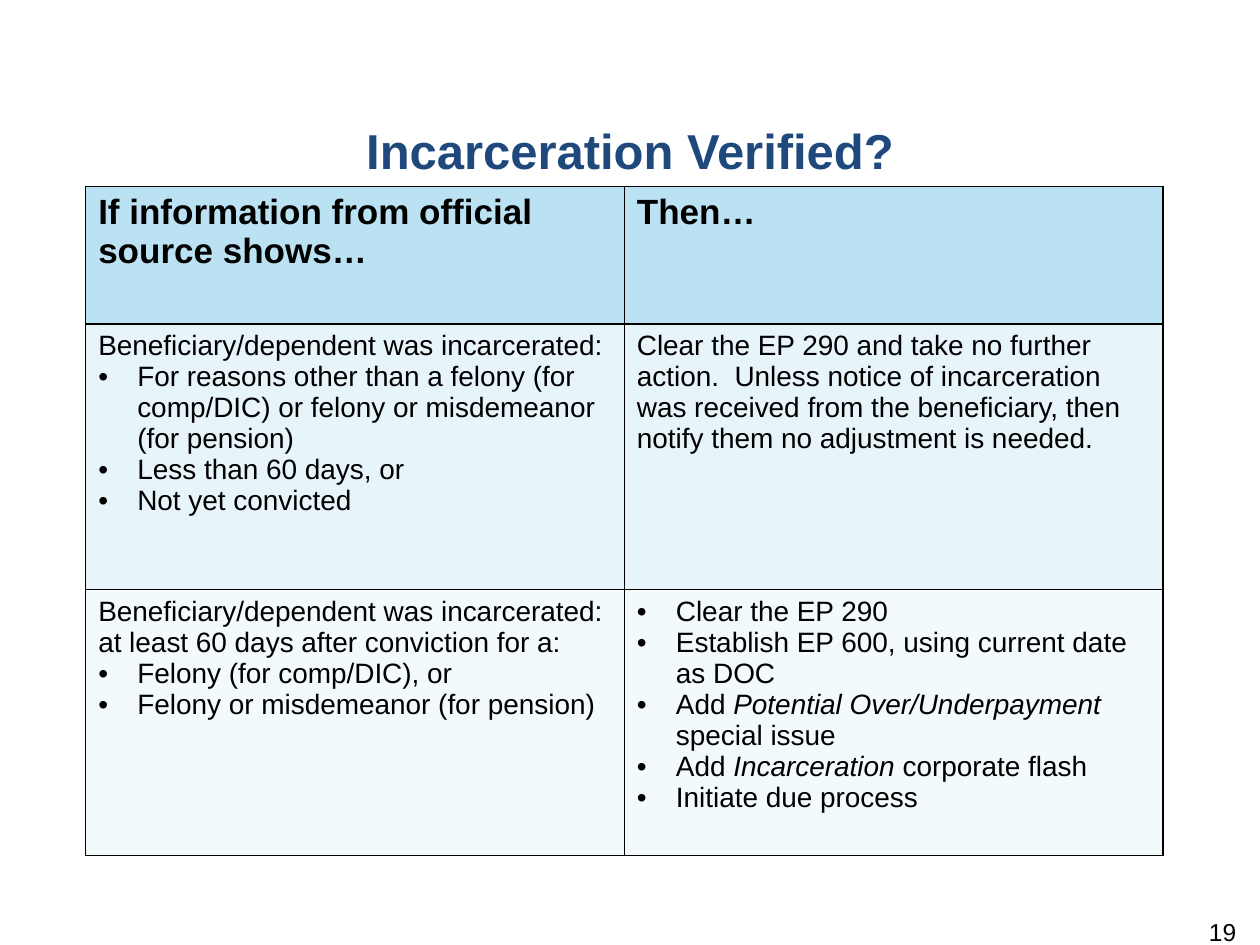
from pptx import Presentation
from pptx.dml.color import RGBColor
from pptx.enum.text import MSO_ANCHOR, PP_ALIGN
from pptx.oxml.ns import qn
from pptx.util import Emu, Inches, Pt
from lxml.etree import SubElement

FONT = "Arial"
BLACK = "000000"
INDENT = Inches(0.31)
ROW_HEIGHTS = [1.09, 2.11, 2.11]
ROW_FILLS = ["BBE2F2", "E7F4FA", "F3FAFC"]
ROW_SIZES = [20, 16, 16]

ROWS = [
    [["If information from official source shows…"], ["Then…"]],
    [
        [
            "Beneficiary/dependent was incarcerated:",
            "•For reasons other than a felony (for comp/DIC) or felony or misdemeanor (for pension)",
            "•Less than 60 days, or",
            "•Not yet convicted",
        ],
        [
            "Clear the EP 290 and take no further action.  Unless notice of incarceration "
            "was received from the beneficiary, then notify them no adjustment is needed."
        ],
    ],
    [
        [
            "Beneficiary/dependent was incarcerated: at least 60 days after conviction for a:",
            "•Felony (for comp/DIC), or",
            "•Felony or misdemeanor (for pension)",
        ],
        [
            "•Clear the EP 290",
            "•Establish EP 600, using current date as DOC",
            "•Add *Potential Over/Underpayment *special issue",
            "•Add *Incarceration* corporate flash",
            "•Initiate due process",
        ],
    ],
]


def color(hex_value):
    """Turn a hex string into a colour."""
    return RGBColor.from_string(hex_value)


def add_run(p, text, size, hex_value=BLACK, bold=False, italic=False):
    """Add one formatted run to a paragraph."""
    r = p.add_run()
    r.text = text
    r.font.name, r.font.size = FONT, Pt(size)
    r.font.bold, r.font.italic = bold, italic
    r.font.color.rgb = color(hex_value)


def add_label(s, box, text, size, align, anchor, top_inset, **style):
    """Add a single-line text box."""
    tf = s.shapes.add_textbox(*map(Inches, box)).text_frame
    tf.word_wrap = True
    tf.vertical_anchor = anchor
    tf.margin_top = Inches(top_inset)
    p = tf.paragraphs[0]
    p.alignment, p.space_after = align, Pt(6)
    add_run(p, text, size, **style)


def set_bullet(p):
    """Give a paragraph a hanging bullet."""
    pPr = p._p.get_or_add_pPr()
    pPr.set("marL", str(INDENT))
    pPr.set("indent", str(-INDENT))
    SubElement(pPr, qn("a:buFont"), typeface=FONT)
    SubElement(pPr, qn("a:buChar"), char="•")


def set_borders(cell):
    """Draw a one-point black line on every side of a cell."""
    tcPr = cell._tc.get_or_add_tcPr()
    for side in ("lnL", "lnR", "lnT", "lnB"):
        ln = SubElement(tcPr, qn(f"a:{side}"), w=str(Pt(1)))
        SubElement(SubElement(ln, qn("a:solidFill")), qn("a:srgbClr"), val=BLACK)


def fill_cell(cell, lines, fill, size, bold):
    """Style a cell and write its lines, with italics between asterisks."""
    set_borders(cell)
    cell.fill.solid()
    cell.fill.fore_color.rgb = color(fill)
    tf = cell.text_frame
    for i, line in enumerate(lines):
        p = tf.add_paragraph() if i else tf.paragraphs[0]
        if line.startswith("•"):
            set_bullet(p)
        p.space_after = Pt(0)
        for j, part in enumerate(line.lstrip("•").split("*")):
            add_run(p, part, size, bold=bold, italic=j % 2 == 1)


def add_rules_table(s):
    """Add the table of conditions and actions."""
    box = map(Inches, (0.68, 1.48, 8.55, sum(ROW_HEIGHTS)))
    frame = s.shapes.add_table(len(ROWS), len(ROWS[0]), *box)
    table = frame.table
    for column in table.columns:
        column.width = Emu(Inches(8.55) // 2)
    for i, row in enumerate(ROWS):
        table.rows[i].height = Inches(ROW_HEIGHTS[i])
        for j, lines in enumerate(row):
            fill_cell(table.cell(i, j), lines, ROW_FILLS[i], ROW_SIZES[i], i == 0)


def main():
    """Build and save the slide."""
    prs = Presentation()
    prs.slide_width, prs.slide_height = Inches(10), Inches(7.5)
    s = prs.slides.add_slide(prs.slide_layouts[6])
    add_label(s, (0, 0.87, 10, 0.76), "Incarceration Verified?", 28,
              PP_ALIGN.CENTER, MSO_ANCHOR.TOP, 0.09, hex_value="1F497D", bold=True)
    add_label(s, (7.58, 7.22, 2.33, 0.4), "19", 14,
              PP_ALIGN.RIGHT, MSO_ANCHOR.MIDDLE, 0)
    add_rules_table(s)
    prs.save("out.pptx")


if __name__ == "__main__":
    main()
